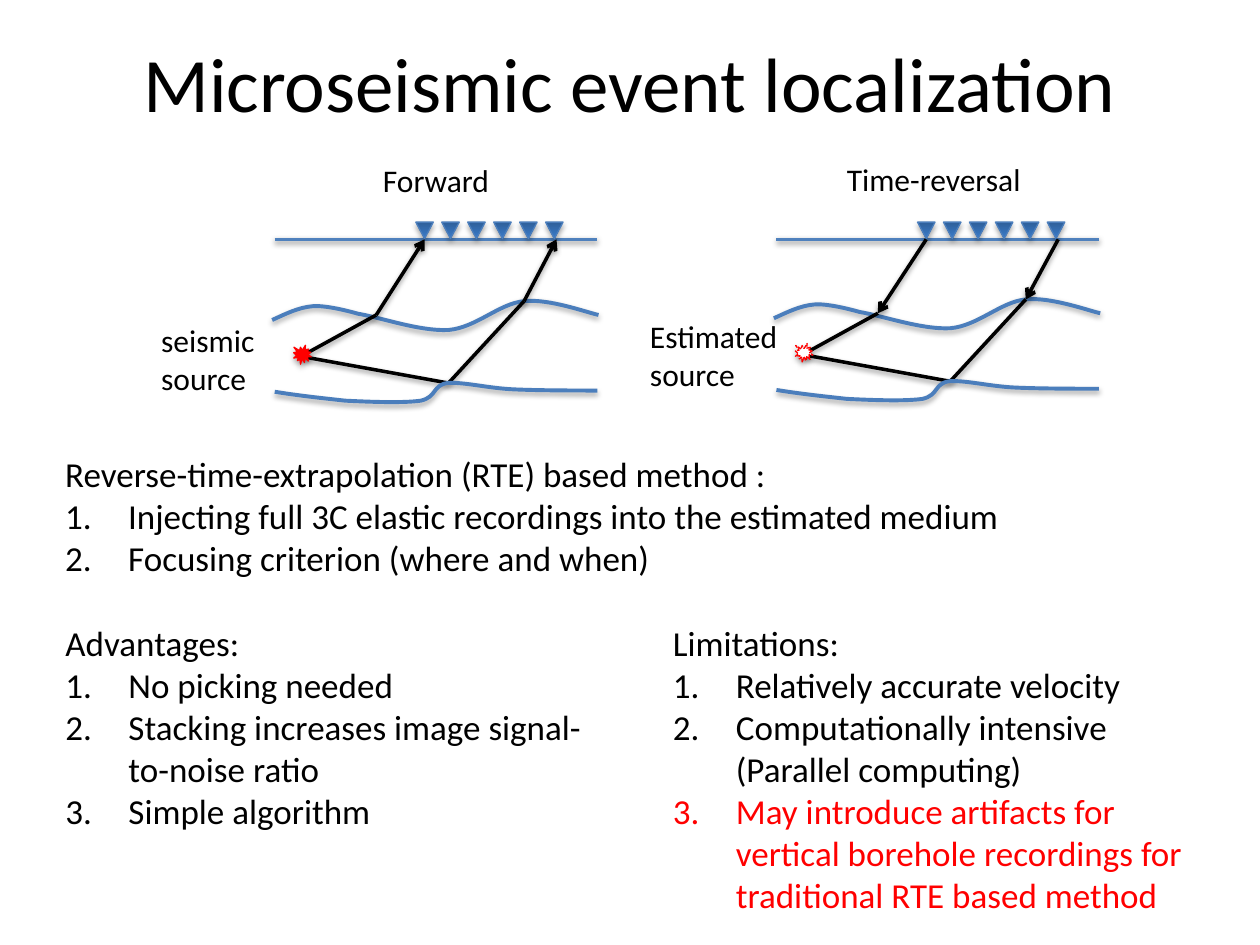
from lxml import etree
from pptx import Presentation
from pptx import util as u
from pptx.dml.color import RGBColor
from pptx.enum import dml, shapes, text
from pptx.oxml import ns

Pt = u.Pt
COLORS = {"black": "000000", "white": "FFFFFF", "red": "FF0000", "layer": "4B7EBC",
          "surface": "4F81BD", "dark": "2F5F99", "light": "3A7CCB"}
FONT = "Calibri"

TITLE = "Microseismic event localization"
METHOD = ["Reverse-time-extrapolation (RTE) based method :",
          "Injecting full 3C elastic recordings into the estimated medium",
          "Focusing criterion (where and when)"]
ADVANTAGES = ["Advantages:", "No picking needed",
              "Stacking increases image signal-to-noise ratio", "Simple algorithm"]
LIMITATIONS = ["Limitations:", "Relatively accurate velocity",
               "Computationally intensive (Parallel computing)",
               "May introduce artifacts for vertical borehole recordings "
               "for traditional RTE based method"]

PANELS = [
    dict(caption="Forward", caption_at=(157, 88.6, 184.3, 26.6),
         label="seismic source", label_at=(85, 180, 85.7, 51),
         dx=0, dy=0, reverse=False, fill="red", dash=None),
    dict(caption="Time-reversal", caption_at=(441.4, 87.8, 184.3, 26.6),
         label="Estimated source", label_at=(364.3, 177.8, 90, 46.8),
         dx=286.7, dy=-1, reverse=True, fill="white", dash=dml.MSO_LINE.SQUARE_DOT),
]
SURFACE = 136.8
SURFACE_ENDS = (157, 341.3)
RECEIVERS = dict(count=6, left=237.6, top=127, step=14.83, width=10, height=9.4)
SOURCE = (167.8, 197.3, 10, 10.8)
RAYS = [[(172.8, 203.2), (215, 180), (242.6, SURFACE)],
        [(172.8, 203.8), (256.3, 218.9), (299.5, 172.1), (318, SURFACE)]]
WAVE = [(155.5, 182.9), (163.4, 179.3), (170.6, 175.7), (178.6, 175), (187.2, 174.2),
        (204.5, 179.3), (204.5, 179.3), (217.4, 181.4), (239.8, 189.4), (256.3, 188.6),
        (272.2, 187.2), (285.1, 173.5), (299.5, 172.1), (313.9, 170.6), (335.5, 178.6),
        (342, 180)]
BASE = [(157, 223.9), (170.6, 226.1), (183.6, 227.5), (197.3, 229), (211.7, 229.7),
        (230.4, 230.4), (240.5, 229), (249.8, 226.8), (247, 220.3), (255.6, 218.9),
        (265, 218.2), (278.6, 221.8), (293, 222.5), (307.4, 223.2), (333.4, 223.2),
        (341.3, 223.2)]


def color(name):
    return RGBColor.from_string(COLORS[name])


def child(parent, tag, **attributes):
    return etree.SubElement(parent, ns.qn(tag), {k: str(v) for k, v in attributes.items()})


def place(box, at):
    box.left, box.top, box.width, box.height = map(Pt, at)


def write(box, lines, size=20, align=text.PP_ALIGN.LEFT, anchor=text.MSO_ANCHOR.TOP,
          fit=text.MSO_AUTO_SIZE.NONE, wrap=True, numbered=False, last="black"):
    frame = box.text_frame
    frame.word_wrap, frame.auto_size, frame.vertical_anchor = wrap, fit, anchor
    for index, line in enumerate(lines):
        para = frame.paragraphs[0] if index == 0 else frame.add_paragraph()
        para.alignment, para.space_before = align, Pt(0)
        properties = para._p.get_or_add_pPr()
        if numbered and index:
            properties.set("marL", str(Pt(36)))
            properties.set("indent", str(-Pt(36)))
            child(properties, "a:buFont", typeface="+mj-lt")
            child(properties, "a:buAutoNum", type="arabicPeriod")
        else:
            properties.set("marL", "0")
            properties.set("indent", "0")
            child(properties, "a:buNone")
        span = para.add_run()
        span.text = line
        span.font.size, span.font.name = Pt(size), FONT
        span.font.color.rgb = color(last if line == lines[-1] else "black")


def outline(item, name, width, dash=None, arrow=False, alpha=35, distance=1.8):
    item.line.color.rgb, item.line.width = color(name), Pt(width)
    if dash:
        item.line.dash_style = dash
    if arrow:
        child(item.line._get_or_add_ln(), "a:tailEnd", type="arrow")
    effects = child(item._element.spPr, "a:effectLst")
    shadow = child(effects, "a:outerShdw", blurRad=Pt(3.1), dist=Pt(distance),
                   dir=5400000, rotWithShape=0)
    child(child(shadow, "a:srgbClr", val=COLORS["black"]), "a:alpha", val=alpha * 1000)


def add_line(group, start, end, name="black", arrow=False):
    line = group.shapes.add_connector(shapes.MSO_CONNECTOR.STRAIGHT,
                                      *map(Pt, (*start, *end)))
    outline(line, name, 2, arrow=arrow, alpha=38, distance=1.6)


def add_curve(group, points):
    builder = group.shapes.build_freeform(*map(Pt, points[0]))
    builder.add_line_segments([tuple(map(Pt, p)) for p in points[1:]], close=False)
    curve = builder.convert_to_shape()
    segments = curve._element.xpath(".//a:lnTo")
    parent = segments[0].getparent()
    for start in range(0, len(segments), 3):
        bezier = child(parent, "a:cubicBezTo")
        for segment in segments[start:start + 3]:
            bezier.append(segment[0])
            parent.remove(segment)
    curve.fill.background()
    outline(curve, "layer", 2.25)


def add_receivers(group, dx):
    for index in range(RECEIVERS["count"]):
        receiver = group.shapes.add_shape(
            shapes.MSO_SHAPE.ISOSCELES_TRIANGLE,
            Pt(RECEIVERS["left"] + dx + index * RECEIVERS["step"]), Pt(RECEIVERS["top"]),
            Pt(RECEIVERS["width"]), Pt(RECEIVERS["height"]))
        receiver._element.spPr.xfrm.set("flipV", "1")
        receiver.fill.gradient()
        receiver.fill.gradient_angle = 90
        for stop, name in zip(receiver.fill.gradient_stops, ("dark", "light")):
            stop.color.rgb = color(name)
        outline(receiver, "layer", 0.75)


def add_panel(page, panel):
    group = page.shapes.add_group_shape()
    dx, dy = panel["dx"], panel["dy"]

    def shift(points):
        return [(x + dx, y + (dy if y > SURFACE else 0)) for x, y in points]

    add_curve(group, shift(WAVE))
    add_line(group, *shift([(x, SURFACE) for x in SURFACE_ENDS]), name="surface")
    add_receivers(group, dx)
    for ray in RAYS:
        points = shift(ray)
        for start, end in zip(points[:-2], points[1:-1]):
            add_line(group, start, end)
        final = points[-2:]
        add_line(group, *(reversed(final) if panel["reverse"] else final), arrow=True)
    left, top, width, height = SOURCE
    source = group.shapes.add_shape(shapes.MSO_SHAPE.EXPLOSION1, Pt(left + dx),
                                    Pt(top + dy), Pt(width), Pt(height))
    source.fill.solid()
    source.fill.fore_color.rgb = color(panel["fill"])
    outline(source, "red", 0.75, dash=panel["dash"])
    add_curve(group, shift(BASE))
    for key, align in (("caption", text.PP_ALIGN.CENTER), ("label", text.PP_ALIGN.LEFT)):
        box = group.shapes.add_textbox(*map(Pt, panel[key + "_at"]))
        write(box, [panel[key]], size=18, align=align)


def main():
    deck = Presentation()
    deck.slide_width, deck.slide_height = Pt(720), Pt(540)
    page = deck.slides.add_slide(deck.slide_layouts[3])
    title = page.shapes.title
    place(title, (36, 1.5, 648, 90))
    write(title, [TITLE], size=44, align=text.PP_ALIGN.CENTER, anchor=text.MSO_ANCHOR.MIDDLE)
    for panel in PANELS:
        add_panel(page, panel)
    method = page.shapes.add_textbox(*map(Pt, (30.2, 255, 549.4, 80)))
    write(method, METHOD, numbered=True, wrap=False, fit=text.MSO_AUTO_SIZE.SHAPE_TO_FIT_TEXT)
    advantages, limitations = page.placeholders[1], page.placeholders[2]
    place(advantages, (30.2, 351.4, 324, 128.2))
    write(advantages, ADVANTAGES, numbered=True)
    place(limitations, (377.3, 351.4, 324, 177.1))
    write(limitations, LIMITATIONS, numbered=True, last="red")
    deck.save("out.pptx")


if __name__ == "__main__":
    main()
